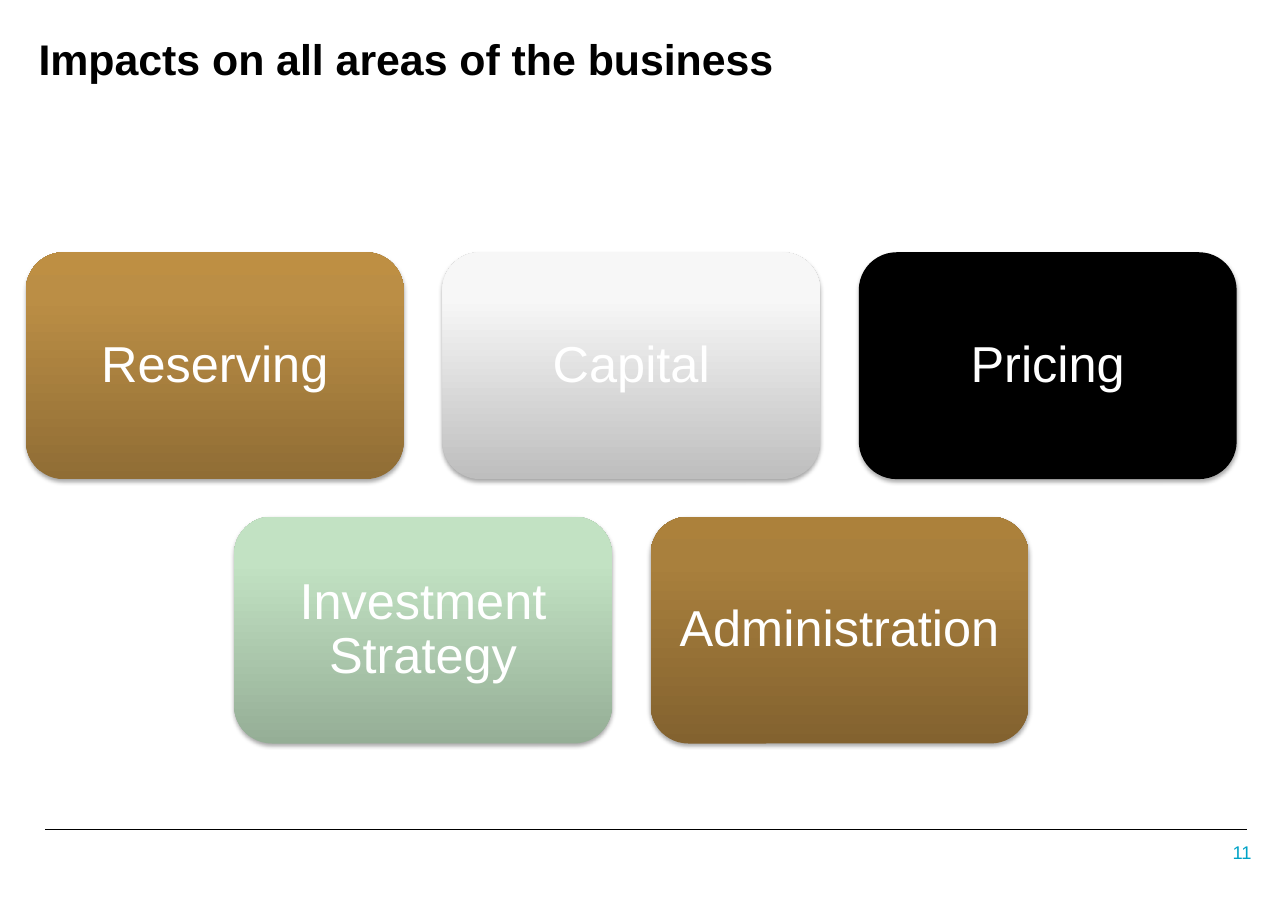
from dataclasses import dataclass

from pptx import Presentation
from pptx import util as u
from pptx.dml import color
from pptx.enum import shapes, text
from pptx.oxml import ns, parse_xml


@dataclass(frozen=True)
class Theme:
    font: str = "Arial"
    ink: str = "000000"
    page: str = "00A3C7"
    label: str = "FFFFFF"
    title_size: int = 28
    label_size: int = 33
    page_size: int = 12
    rule_width: float = 0.75


THEME = Theme()
STOPS = (0, 80, 100)
AREA_ROWS = [
    [
        ("Reserving", ("906D35", "BB8E45", "BE8F43")),
        ("Capital", ("BEBEBE", "F7F7F7", "F8F8F8")),
        ("Pricing", (THEME.ink,)),
    ],
    [
        ("Investment Strategy", ("95AE96", "C2E2C3", "C2E3C4")),
        ("Administration", ("83622F", "A9803D", "AC813B")),
    ],
]
CARD_WIDTH, CARD_HEIGHT = 3.43, 2.06
COLUMN_STEP, ROW_STEP = 3.78, 2.4


def apply(target, values):
    for name, value in values.items():
        setattr(target, name, value)


def write(shape, wording, size, colour, align, anchor, margins, bold=False, spacing=1.0):
    frame = shape.text_frame
    side, edge = (u.Inches(margin) for margin in margins)
    apply(frame, {
        "text": wording, "word_wrap": True, "vertical_anchor": anchor,
        "auto_size": text.MSO_AUTO_SIZE.NONE,
        "margin_left": side, "margin_right": side,
        "margin_top": edge, "margin_bottom": edge,
    })
    paragraph = frame.paragraphs[0]
    apply(paragraph, {"alignment": align, "line_spacing": spacing})
    font = paragraph.runs[0].font
    apply(font, {"name": THEME.font, "size": u.Pt(size), "bold": bold})
    font.color.rgb = color.RGBColor.from_string(colour)


def paint(card, colours):
    if len(colours) == 1:
        card.fill.solid()
        card.fill.fore_color.rgb = color.RGBColor.from_string(colours[0])
        return
    card.fill.gradient()
    card.fill.gradient_angle = 90
    stops = "".join(
        f'<a:gs pos="{stop * 1000}"><a:srgbClr val="{colour}"/></a:gs>'
        for stop, colour in zip(STOPS, colours)
    )
    stop_list = card.element.spPr.find(".//" + ns.qn("a:gsLst"))
    stop_list.getparent().replace(
        stop_list, parse_xml(f'<a:gsLst {ns.nsdecls("a")}>{stops}</a:gsLst>'))


def cast_shadow(card):
    card.shadow.inherit = False
    effects = card.element.spPr.find(ns.qn("a:effectLst"))
    effects.append(parse_xml(
        f'<a:outerShdw {ns.nsdecls("a")} blurRad="{u.Pt(3.1)}" dist="{u.Pt(1.8)}" '
        'dir="5400000" rotWithShape="0"><a:srgbClr val="000000">'
        '<a:alpha val="35000"/></a:srgbClr></a:outerShdw>'))


def add_heading(slide, left, top, width, height):
    heading = slide.shapes.title
    apply(heading, {"left": u.Inches(left), "top": u.Inches(top),
                    "width": u.Inches(width), "height": u.Inches(height)})
    write(heading, "Impacts on all areas of the business", THEME.title_size, THEME.ink,
          text.PP_ALIGN.LEFT, text.MSO_ANCHOR.TOP, (0.11, 0.06), bold=True)


def add_area(slide, left, top, name, colours):
    card = slide.shapes.add_shape(
        shapes.MSO_SHAPE.ROUNDED_RECTANGLE, u.Inches(left), u.Inches(top),
        u.Inches(CARD_WIDTH), u.Inches(CARD_HEIGHT))
    paint(card, colours)
    card.line.fill.background()
    cast_shadow(card)
    write(card, name, THEME.label_size, THEME.label, text.PP_ALIGN.CENTER,
          text.MSO_ANCHOR.MIDDLE, (0.14, 0.14), spacing=0.9)


def add_areas(slide, left, top, width):
    for row, areas in enumerate(AREA_ROWS):
        row_width = COLUMN_STEP * (len(areas) - 1) + CARD_WIDTH
        row_left = left + (width - row_width) / 2
        for column, (name, colours) in enumerate(areas):
            add_area(slide, row_left + column * COLUMN_STEP, top + row * ROW_STEP,
                     name, colours)


def add_footer(slide, left, top, width):
    rule = slide.shapes.add_connector(
        shapes.MSO_CONNECTOR.STRAIGHT, u.Inches(left), u.Inches(top),
        u.Inches(left + width), u.Inches(top))
    rule.line.width = u.Pt(THEME.rule_width)
    rule.line.color.rgb = color.RGBColor.from_string(THEME.ink)
    rule.element.spPr.append(parse_xml(f'<a:effectLst {ns.nsdecls("a")}/>'))
    page_number = slide.shapes.add_textbox(
        u.Inches(left + width - 0.64), u.Inches(top + 0.09), u.Inches(0.81), u.Inches(0.24))
    write(page_number, "11", THEME.page_size, THEME.page, text.PP_ALIGN.RIGHT,
          text.MSO_ANCHOR.MIDDLE, (0.13, 0.06))


def main():
    deck = Presentation()
    apply(deck, {"slide_width": u.Inches(11.69), "slide_height": u.Inches(8.27)})
    slide = deck.slides.add_slide(deck.slide_layouts[5])
    add_footer(slide, 0.41, 7.53, 10.91)
    add_heading(slide, 0.24, 0.24, 9.23, 1.38)
    add_areas(slide, 0.24, 2.29, 10.98)
    deck.save("out.pptx")


if __name__ == "__main__":
    main()
